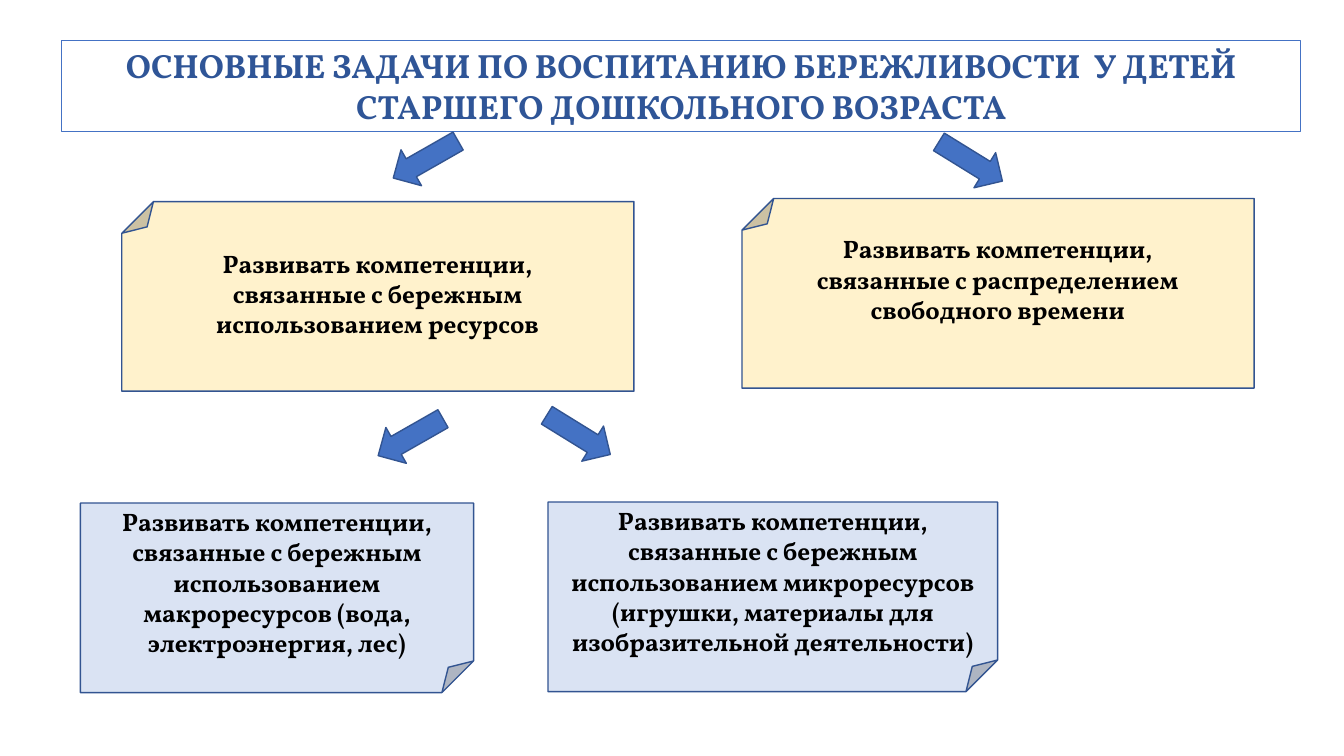
"""Build a slide with a scheme of tasks for teaching thrift to preschool children."""
import pptx
import pptx.dml.color
import pptx.enum.shapes
import pptx.enum.text
import pptx.util

Pt = pptx.util.Pt
RGBColor = pptx.dml.color.RGBColor
MSO_SHAPE = pptx.enum.shapes.MSO_SHAPE
MSO_ANCHOR = pptx.enum.text.MSO_ANCHOR

WHITE = RGBColor(0xFF, 0xFF, 0xFF)
BLACK = RGBColor(0x00, 0x00, 0x00)
BLUE = RGBColor(0x44, 0x72, 0xC4)
TITLE_BLUE = RGBColor(0x2F, 0x55, 0x97)
OUTLINE_BLUE = RGBColor(0x32, 0x54, 0x91)
CREAM = RGBColor(0xFF, 0xF2, 0xCC)
PALE_BLUE = RGBColor(0xDA, 0xE3, 0xF3)

presentation = pptx.Presentation()
presentation.slide_width = Pt(960)
presentation.slide_height = Pt(540)
slide = presentation.slides.add_slide(presentation.slide_layouts[6])


def add_box(kind, box, fill, line=OUTLINE_BLUE, width=1, rotation=0):
    shape = slide.shapes.add_shape(kind, *map(Pt, box))
    if kind == MSO_SHAPE.FOLDED_CORNER:
        shape._element.xpath(".//a:prstGeom")[0].set("prst", "foldedCorner")
    shape.shadow.inherit = False
    shape.fill.solid()
    shape.fill.fore_color.rgb = fill
    shape.line.color.rgb = line
    shape.line.width = Pt(width)
    shape.rotation = rotation
    return shape


def write_text(shape, text, size=18, color=BLACK, anchor=MSO_ANCHOR.TOP):
    shape.text_frame.word_wrap = True
    shape.text_frame.vertical_anchor = anchor
    paragraph = shape.text_frame.paragraphs[0]
    paragraph.alignment = pptx.enum.text.PP_ALIGN.CENTER
    run = paragraph.add_run()
    run.text = text
    font_format = {"name": "Vollkorn", "size": Pt(size), "bold": True}
    for attribute, value in font_format.items():
        setattr(run.font, attribute, value)
    run.font.color.rgb = color


title = add_box(MSO_SHAPE.RECTANGLE, (44, 28.8, 885, 65.4), WHITE, BLUE, 0.75)
write_text(
    title,
    "ОСНОВНЫЕ ЗАДАЧИ ПО ВОСПИТАНИЮ БЕРЕЖЛИВОСТИ  У ДЕТЕЙ СТАРШЕГО ДОШКОЛЬНОГО ВОЗРАСТА",
    24,
    TITLE_BLUE,
)

main_tasks = [
    (87, 144, 173.5, "Развивать компетенции, связанные с бережным использованием ресурсов"),
    (530, 141.8, 163.4, "Развивать компетенции, связанные с распределением свободного времени"),
]
for left, top, text_top, text in main_tasks:
    add_box(MSO_SHAPE.FOLDED_CORNER, (left, top, 365.8, 135.4), CREAM, rotation=180)
    label = slide.shapes.add_textbox(Pt(left + 39), Pt(text_top), Pt(287.3), Pt(72.7))
    write_text(label, text)

resource_tasks = [
    (57.5, 359.3, 280.8,
     "Развивать компетенции, связанные с бережным использованием макроресурсов (вода, электроэнергия, лес)"),
    (391.5, 358.6, 321.1,
     "Развивать компетенции, связанные с бережным использованием микроресурсов "
     "(игрушки, материалы для изобразительной деятельности)"),
]
for left, top, width, text in resource_tasks:
    card = add_box(MSO_SHAPE.FOLDED_CORNER, (left, top, width, 135.4), PALE_BLUE)
    write_text(card, text, anchor=MSO_ANCHOR.MIDDLE)

LEFT_TURN, RIGHT_TURN = 150.3, 31.7
arrows = [
    (277.4, 99.2, LEFT_TURN),
    (666.7, 100.6, RIGHT_TURN),
    (266.6, 297.5, LEFT_TURN),
    (386.6, 295.9, RIGHT_TURN),
]
for left, top, turn in arrows:
    add_box(MSO_SHAPE.RIGHT_ARROW, (left, top, 53.3, 29.5), BLUE, rotation=turn)

presentation.save("out.pptx")
